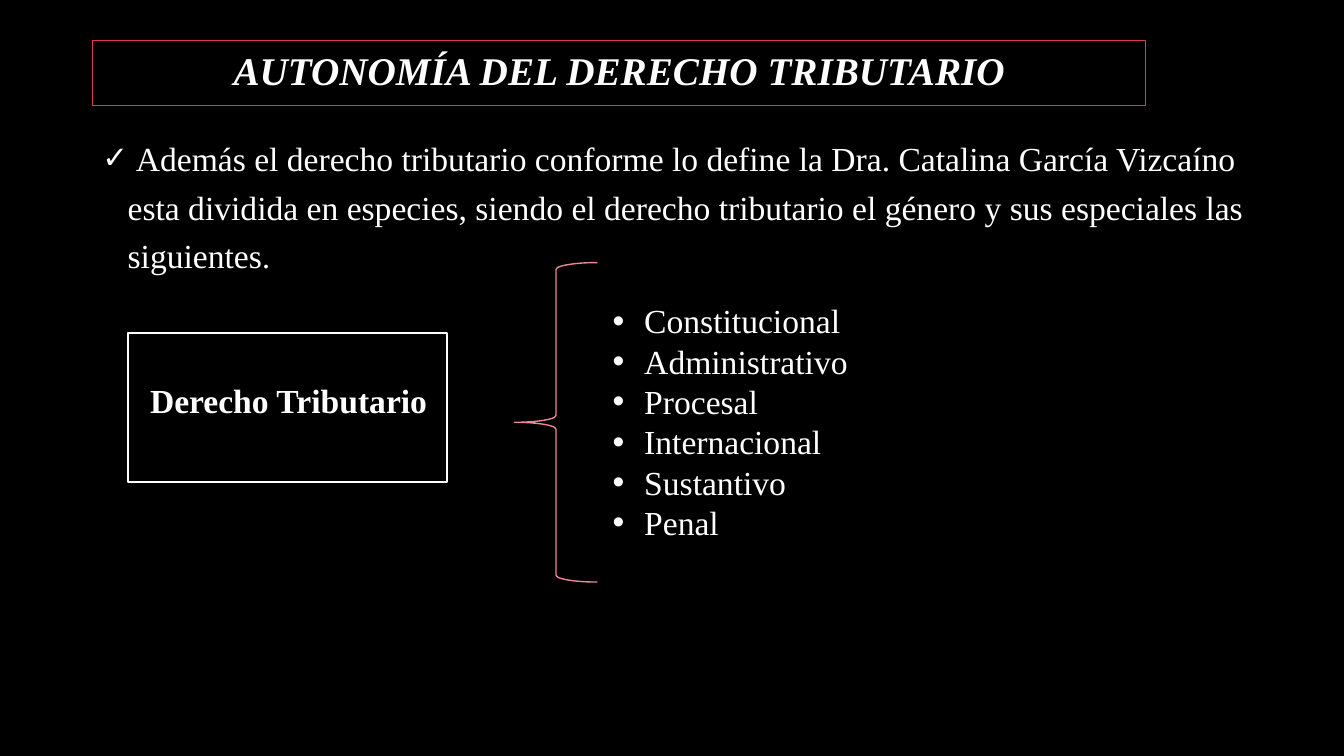
from pptx import Presentation
from pptx.dml.color import RGBColor
from pptx.enum.shapes import MSO_SHAPE as Shape
from pptx.enum.text import MSO_ANCHOR as Anchor, MSO_AUTO_SIZE as AutoSize, PP_ALIGN as Align
from pptx.oxml.xmlchemy import OxmlElement
from pptx.util import Pt

WHITE = "FFFFFF"
SPECIES = ["Constitucional", "Administrativo", "Procesal",
           "Internacional", "Sustantivo", "Penal"]


def write(paragraph, text, color=WHITE, **font_format):
    """Add a run in the slide's font, with any further font attributes."""
    run = paragraph.add_run()
    run.text = text
    values = {"name": "Times New Roman", "size": Pt(24), **font_format}
    for attribute, value in values.items():
        setattr(run.font, attribute, value)
    run.font.color.rgb = RGBColor.from_string(color)


def set_bullet(paragraph, char, indent):
    """Hang a white bullet to the left of the text by the indent in points."""
    properties = paragraph._p.get_or_add_pPr()
    properties.set("marL", str(Pt(indent)))
    properties.set("indent", str(-Pt(indent)))
    bullet_color = OxmlElement("a:buClr")
    white = OxmlElement("a:srgbClr")
    white.set("val", WHITE)
    bullet_color.append(white)
    bullet_font = OxmlElement("a:buFont")
    bullet_font.set("typeface", "Arial")
    bullet = OxmlElement("a:buChar")
    bullet.set("char", char)
    for element in (bullet_color, bullet_font, bullet):
        properties.append(element)


deck = Presentation()
deck.slide_width, deck.slide_height = Pt(960), Pt(540)
slide = deck.slides.add_slide(deck.slide_layouts[1])
slide.background.fill.solid()
slide.background.fill.fore_color.rgb = RGBColor.from_string("000000")

# Title and introduction
heading, intro = slide.placeholders
for part, box in ((heading, (66, 28.8, 752.4, 46.8)), (intro, (66, 89.3, 850.3, 442))):
    part.left, part.top, part.width, part.height = map(Pt, box)
    part.text_frame.auto_size = AutoSize.NONE

heading.line.color.rgb = RGBColor.from_string("E03754")
heading.line.width = Pt(0.75)
heading.text_frame.vertical_anchor = Anchor.MIDDLE
heading_line = heading.text_frame.paragraphs[0]
heading_line.alignment = Align.CENTER
heading_line.line_spacing = 0.9
write(heading_line, "AUTONOMÍA DEL DERECHO TRIBUTARIO", size=Pt(28), bold=True, italic=True)

intro_line = intro.text_frame.paragraphs[0]
intro_line.line_spacing = 1.2
intro_line.space_before = Pt(10)
set_bullet(intro_line, "✓", 18)
write(intro_line, " ", size=Pt(22))
write(intro_line, "Además el derecho tributario conforme lo define la Dra. Catalina García "
      "Vizcaíno esta dividida en especies, siendo el derecho tributario el género "
      "y sus especiales las siguientes")
write(intro_line, ".", size=Pt(23))

# Species of tax law
species_list = slide.shapes.add_textbox(Pt(430.6), Pt(211), Pt(381.6), Pt(181.4)).text_frame
species_list.word_wrap = True
for index, species in enumerate(SPECIES):
    entry = species_list.add_paragraph() if index else species_list.paragraphs[0]
    set_bullet(entry, "•", 22.5)
    write(entry, species)

# Frame, its label and the brace
for preset, box, color, weight in (
    (Shape.RECTANGLE, (91.4, 237.6, 228.2, 106.9), WHITE, 1.5),
    (Shape.LEFT_BRACE, (367.6, 187.6, 59.2, 228.2), "EC8798", 1),
):
    outline = slide.shapes.add_shape(preset, *map(Pt, box))
    outline.shadow.inherit = False
    outline.fill.background()
    outline.line.color.rgb = RGBColor.from_string(color)
    outline.line.width = Pt(weight)

branch = slide.shapes.add_textbox(Pt(100.1), Pt(267.8), Pt(230.4), Pt(36.7)).text_frame
branch.word_wrap = True
write(branch.paragraphs[0], "Derecho Tributario", bold=True)

deck.save("out.pptx")
